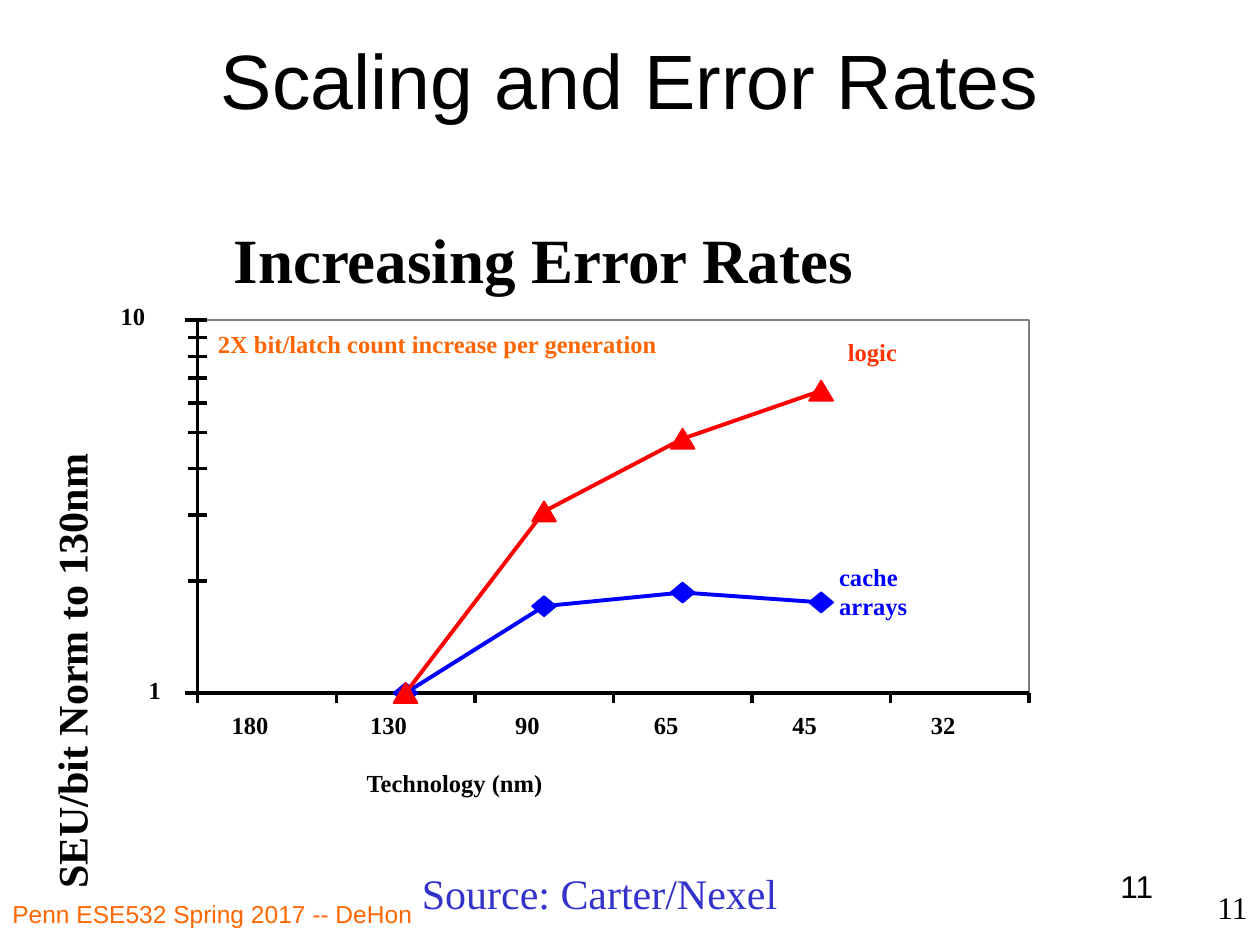
"""Build the Scaling and Error Rates slide with a logarithmic line plot."""
import math

import pptx
import pptx.dml.color
import pptx.enum.shapes
import pptx.enum.text
import pptx.oxml
import pptx.oxml.ns
import pptx.util

Pt = pptx.util.Pt
RGBColor = pptx.dml.color.RGBColor
ALIGN = pptx.enum.text.PP_ALIGN
ANCHOR = pptx.enum.text.MSO_ANCHOR
SHAPE = pptx.enum.shapes.MSO_SHAPE
STRAIGHT = pptx.enum.shapes.MSO_CONNECTOR.STRAIGHT

BLACK = RGBColor(0x00, 0x00, 0x00)
GRAY = RGBColor(0x80, 0x80, 0x80)
BLUE = RGBColor(0x00, 0x00, 0xFF)
RED = RGBColor(0xFF, 0x00, 0x00)
ORANGE = RGBColor(0xFF, 0x66, 0x00)
VERMILION = RGBColor(0xFF, 0x33, 0x00)
INDIGO = RGBColor(0x33, 0x33, 0xCC)
SANS, SERIF = "Arial", "Times New Roman"

LEFT, TOP, WIDTH, HEIGHT = 113, 183, 475, 213
RIGHT, BOTTOM = LEFT + WIDTH, TOP + HEIGHT
NODES = ["180", "130", "90", "65", "45", "32"]
STEP = WIDTH / len(NODES)
MARK_W, MARK_H = 13.5, 11.3


def add_line(x1, y1, x2, y2, color=BLACK, width=0.0):
    line = s.shapes.add_connector(STRAIGHT, Pt(x1), Pt(y1), Pt(x2), Pt(y2))
    line.line.color.rgb = color
    line.line.width = Pt(width)
    line._element.spPr.append(pptx.oxml.parse_xml(
        f'<a:effectLst {pptx.oxml.ns.nsdecls("a")}/>'))


def add_text(text, x, y, w, h, size, color=BLACK, name=SERIF, bold=True,
             align=ALIGN.LEFT, anchor=ANCHOR.TOP, inset=(0, 0), wrap=False):
    sp = s.shapes.add_textbox(Pt(x), Pt(y), Pt(w), Pt(h))
    tf = sp.text_frame
    tf.margin_left = tf.margin_right = Pt(inset[0])
    tf.margin_top = tf.margin_bottom = Pt(inset[1])
    tf.word_wrap, tf.vertical_anchor = wrap, anchor
    tf.text = text
    for p in tf.paragraphs:
        p.alignment = align
        p.font.name, p.font.size, p.font.bold = name, Pt(size), bold
        p.font.color.rgb = color
    return sp


prs = pptx.Presentation()
prs.slide_width, prs.slide_height = Pt(720), Pt(540)
s = prs.slides.add_slide(prs.slide_layouts[6])

frame_texts = [
    ("Penn ESE532 Spring 2017 -- DeHon", 0, 510, 294, 30, 14, ORANGE, SANS, ALIGN.LEFT, ANCHOR.TOP),
    ("11", 516, 492, 150, 36, 18, BLACK, SANS, ALIGN.RIGHT, ANCHOR.TOP),
    ("Scaling and Error Rates", 54, 0, 612, 90, 44, BLACK, SANS, ALIGN.CENTER, ANCHOR.MIDDLE),
    ("Source: Carter/Nexel", 234, 492, 330, 24, 24, INDIGO, SERIF, ALIGN.LEFT, ANCHOR.TOP),
    ("11", 570, 504, 150, 36, 18, BLACK, SERIF, ALIGN.RIGHT, ANCHOR.TOP),
]
for text, x, y, w, h, size, color, name, align, anchor in frame_texts:
    add_text(text, x, y, w, h, size, color, name, False, align, anchor, (7.2, 3.6), True)

plot = s.shapes.add_shape(SHAPE.RECTANGLE, Pt(LEFT), Pt(TOP), Pt(WIDTH), Pt(HEIGHT))
plot.shadow.inherit = False
plot.fill.background()
plot.line.color.rgb = GRAY
plot.line.width = Pt(1.13)

add_line(LEFT, TOP, LEFT, BOTTOM)
add_line(LEFT, BOTTOM, RIGHT, BOTTOM)
for value in range(1, 11):
    y = BOTTOM - HEIGHT * math.log10(value)
    add_line(LEFT - 5.5, y, LEFT + 5.5, y)
for y in (TOP, BOTTOM):
    add_line(LEFT - 7, y, LEFT, y)
for i in range(len(NODES) + 1):
    add_line(LEFT + i * STEP, BOTTOM + 6, LEFT + i * STEP, BOTTOM)

all_series = [
    ([1, 1.71, 1.86, 1.75], BLUE, SHAPE.DIAMOND),
    ([1, 3.07, 4.81, 6.47], RED, SHAPE.ISOSCELES_TRIANGLE),
]
for values, color, marker in all_series:
    points = [(LEFT + (i + 1.5) * STEP, BOTTOM - HEIGHT * math.log10(value))
              for i, value in enumerate(values)]
    for start, end in zip(points, points[1:]):
        add_line(*start, *end, color, 2.25)
    for x, y in points:
        sp = s.shapes.add_shape(marker, Pt(x - MARK_W / 2), Pt(y - MARK_H / 2),
                                Pt(MARK_W), Pt(MARK_H))
        sp.shadow.inherit = False
        sp.fill.solid()
        sp.fill.fore_color.rgb = color
        sp.line.color.rgb = color
        sp.line.width = Pt(1.13)

for i, node in enumerate(NODES):
    width = 7.5 * len(node)
    add_text(node, LEFT + (i + 0.5) * STEP - 9 - width / 2, 406, width, 17, 14)

plot_texts = [
    ("Increasing Error Rates", 133.5, 126, 386, 43, 36, BLACK),
    ("1", 85, 386, 8, 17, 14, BLACK),
    ("10", 69, 172, 16, 17, 14, BLACK),
    ("Technology (nm)", 209.5, 439, 112, 17, 14, BLACK),
    ("cache\narrays", 479.5, 321, 43, 34, 14, BLUE),
    ("logic", 484.5, 192.5, 32, 17, 14, VERMILION),
    ("2X bit/latch count increase per generation", 124.5, 188, 261, 33, 14, ORANGE),
]
for text, x, y, w, h, size, color in plot_texts:
    add_text(text, x, y, w, h, size, color)

axis_title = add_text("SEU/bit Norm to 130nm", -82, 366, 250, 34, 24)
axis_title.rotation = 270

prs.save("out.pptx")
